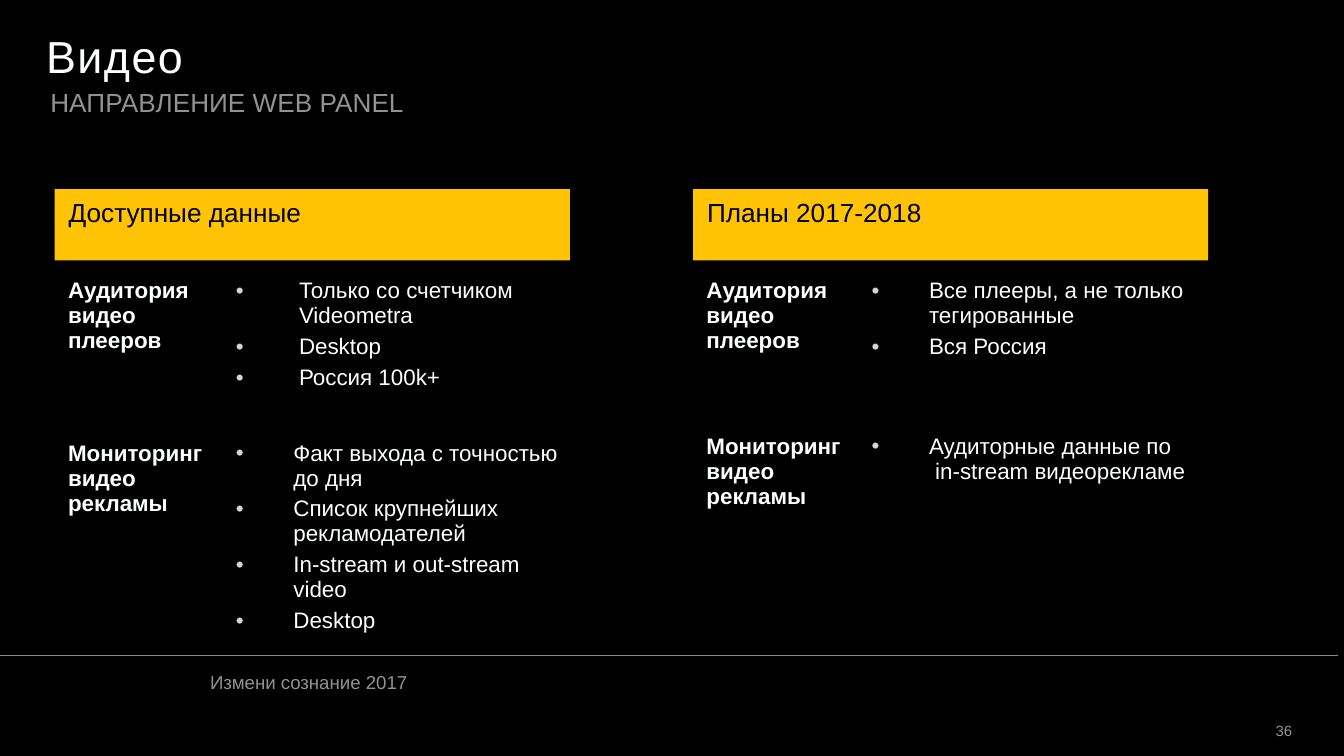
from dataclasses import dataclass

from lxml import etree
from pptx import Presentation, util as u
from pptx.dml.color import RGBColor
from pptx.enum import shapes, text
from pptx.oxml import ns

PX = 9525


@dataclass(frozen=True)
class Theme:
    """Colours, font and type sizes of the deck."""
    face: str = "Arial"
    ground: str = "000000"
    ink: str = "FEFFFF"
    accent: str = "FEC305"
    muted: str = "929292"
    rule: str = "8A8A8A"
    bullet: str = "D5D5D5"
    title: int = 24
    heading: int = 14
    body: int = 12
    footer: int = 10
    number: int = 8


THEME = Theme()
PANELS = [
    {
        "box": (39, 135, 368, 51),
        "heading": "Доступные данные",
        "columns": (119, 256),
        "rows": (116, 156),
        "topics": [
            ("Аудитория видео плееров", 46,
             ["Только со счетчиком\nVideometra", "Desktop", "Россия 100k+"]),
            ("Мониторинг видео рекламы", 42,
             ["Факт выхода с точностью до дня", "Список крупнейших рекламодателей",
              "In-stream и out-stream video", "Desktop"]),
        ],
    },
    {
        "box": (495, 135, 368, 51),
        "heading": "Планы 2017-2018",
        "columns": (117, 258),
        "rows": (111, 77),
        "topics": [
            ("Аудитория видео плееров", 42,
             ["Все плееры, а не только тегированные", "Вся Россия"]),
            ("Мониторинг видео рекламы", 42,
             ["Аудиторные данные по\n in-stream видеорекламе"]),
        ],
    },
]


def px(*lengths):
    """Turn px lengths into EMU."""
    return [u.Emu(length * PX) for length in lengths]


def apply(target, formats):
    """Set every attribute named in a dict of format values."""
    for name, value in formats.items():
        setattr(target, name, value)


def add_xml(parent, tag, **attributes):
    """Append a DrawingML element and return it."""
    return etree.SubElement(parent, ns.qn(tag), attributes)


def style_font(font, size, color, bold=False):
    """Give a font the deck's face with a size and colour."""
    apply(font, {"name": THEME.face, "size": u.Pt(size), "bold": bold})
    font.color.rgb = RGBColor.from_string(color)


def write(paragraph, words, size, color, bold=False, indent=0):
    """Fill a paragraph with left-aligned styled text."""
    paragraph.text = words
    paragraph.alignment = text.PP_ALIGN.LEFT
    if indent:
        paragraph._p.get_or_add_pPr().set("marL", str(indent * PX))
    for run in paragraph.runs:
        style_font(run.font, size, color, bold)


def set_frame(frame, anchor=text.MSO_ANCHOR.TOP, margins=(10, 5, 10, 5)):
    """Set wrapping, anchor and inner margins of a text frame."""
    left, top, right, bottom = px(*margins)
    apply(frame, {"word_wrap": True, "auto_size": text.MSO_AUTO_SIZE.NONE,
                  "vertical_anchor": anchor, "margin_left": left,
                  "margin_top": top, "margin_right": right,
                  "margin_bottom": bottom})


def add_header(slide, box):
    """Place the title and the subtitle under it."""
    x, y, width, height = box
    title = slide.shapes.title
    apply(title, dict(zip(("left", "top", "width", "height"),
                          px(x, y, width, 57))))
    set_frame(title.text_frame, text.MSO_ANCHOR.MIDDLE, (29, 22, 29, 0))
    heading = title.text_frame.paragraphs[0]
    write(heading, "Видео", THEME.title, THEME.ink, indent=4)
    heading.runs[0].font._element.set("spc", "80")

    subtitle = slide.shapes.add_textbox(*px(x, y + 57, width, height - 57))
    set_frame(subtitle.text_frame)
    write(subtitle.text_frame.paragraphs[0], "НАПРАВЛЕНИЕ WEB PANEL",
          THEME.heading, THEME.muted, indent=26)


def add_bullets(frame, items, indent):
    """List the items as bulleted paragraphs with a hanging indent."""
    for index, item in enumerate(items):
        paragraph = frame.add_paragraph() if index else frame.paragraphs[0]
        write(paragraph, item, THEME.body, THEME.ink, indent=indent)
        if index:
            paragraph.space_before = u.Pt(3)
        properties = paragraph._p.get_or_add_pPr()
        properties.set("indent", str((1 - indent) * PX))
        color = add_xml(properties, "a:buClr")
        add_xml(color, "a:srgbClr", val=THEME.bullet)
        add_xml(properties, "a:buFont", typeface=THEME.face)
        add_xml(properties, "a:buChar", char="•")


def clear_cell(cell):
    """Remove the borders and fill of a table cell."""
    properties = cell._tc.get_or_add_tcPr()
    for side in "LRTB":
        add_xml(add_xml(properties, f"a:ln{side}", w="0"), "a:noFill")
    cell.fill.background()


def add_panel(slide, box, heading, columns, rows, topics):
    """Place a heading bar and the table of topics below it."""
    x, y, width, height = box
    bar = slide.shapes.add_shape(shapes.MSO_SHAPE.RECTANGLE,
                                 *px(x, y, width, height))
    bar.shadow.inherit = False
    bar.fill.solid()
    bar.fill.fore_color.rgb = RGBColor.from_string(THEME.accent)
    bar.line.fill.background()
    set_frame(bar.text_frame)
    write(bar.text_frame.paragraphs[0], heading, THEME.heading, THEME.ground)

    table = slide.shapes.add_table(
        len(rows), len(columns),
        *px(x, y + height + 8, sum(columns), sum(rows))).table
    apply(table, {"first_row": False, "horz_banding": False})
    for column, length in zip(table.columns, px(*columns)):
        column.width = length
    for row, length, (topic, indent, items) in zip(table.rows, px(*rows), topics):
        row.height = length
        name, details = row.cells
        write(name.text_frame.paragraphs[0], topic, THEME.body, THEME.ink, True)
        add_bullets(details.text_frame, items, indent)
        for cell in row.cells:
            clear_cell(cell)


def add_footer(slide, box):
    """Place the rule, the footer text and the slide number."""
    x, y, width, _ = box
    rule = slide.shapes.add_connector(shapes.MSO_CONNECTOR.STRAIGHT,
                                      *px(x, y, x + width, y))
    rule.line.width = u.Pt(0.25)
    rule.line.color.rgb = RGBColor.from_string(THEME.rule)
    add_xml(rule._element.spPr, "a:effectLst")

    event = slide.shapes.add_textbox(*px(x + 140, y + 8, 723, 22))
    set_frame(event.text_frame, text.MSO_ANCHOR.MIDDLE)
    write(event.text_frame.paragraphs[0], "Измени сознание 2017",
          THEME.footer, THEME.muted)

    number = slide.shapes.add_textbox(*px(x + 876, y + 39, 47, 21))
    set_frame(number.text_frame, text.MSO_ANCHOR.BOTTOM, (0, 0, 0, 0))
    paragraph = number.text_frame.paragraphs[0]
    write(paragraph, "36", THEME.number, THEME.muted)
    paragraph.alignment = text.PP_ALIGN.RIGHT


def main():
    """Build and save the deck."""
    deck = Presentation()
    deck.slide_width, deck.slide_height = px(960, 540)
    slide = deck.slides.add_slide(deck.slide_layouts[5])
    slide.background.fill.solid()
    slide.background.fill.fore_color.rgb = RGBColor.from_string(THEME.ground)
    add_footer(slide, (0, 468, 956, 72))
    add_header(slide, (0, 0, 960, 84))
    for panel in PANELS:
        add_panel(slide, **panel)
    deck.save("out.pptx")


if __name__ == "__main__":
    main()
